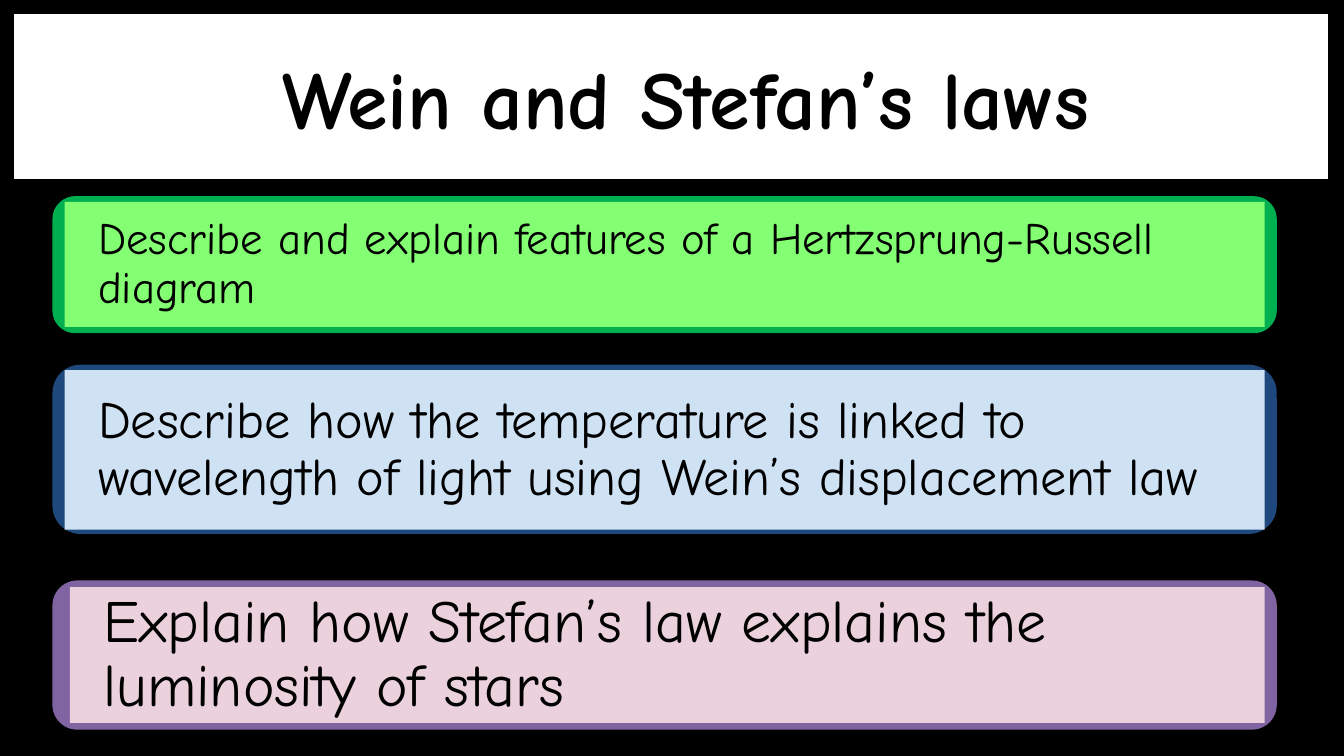
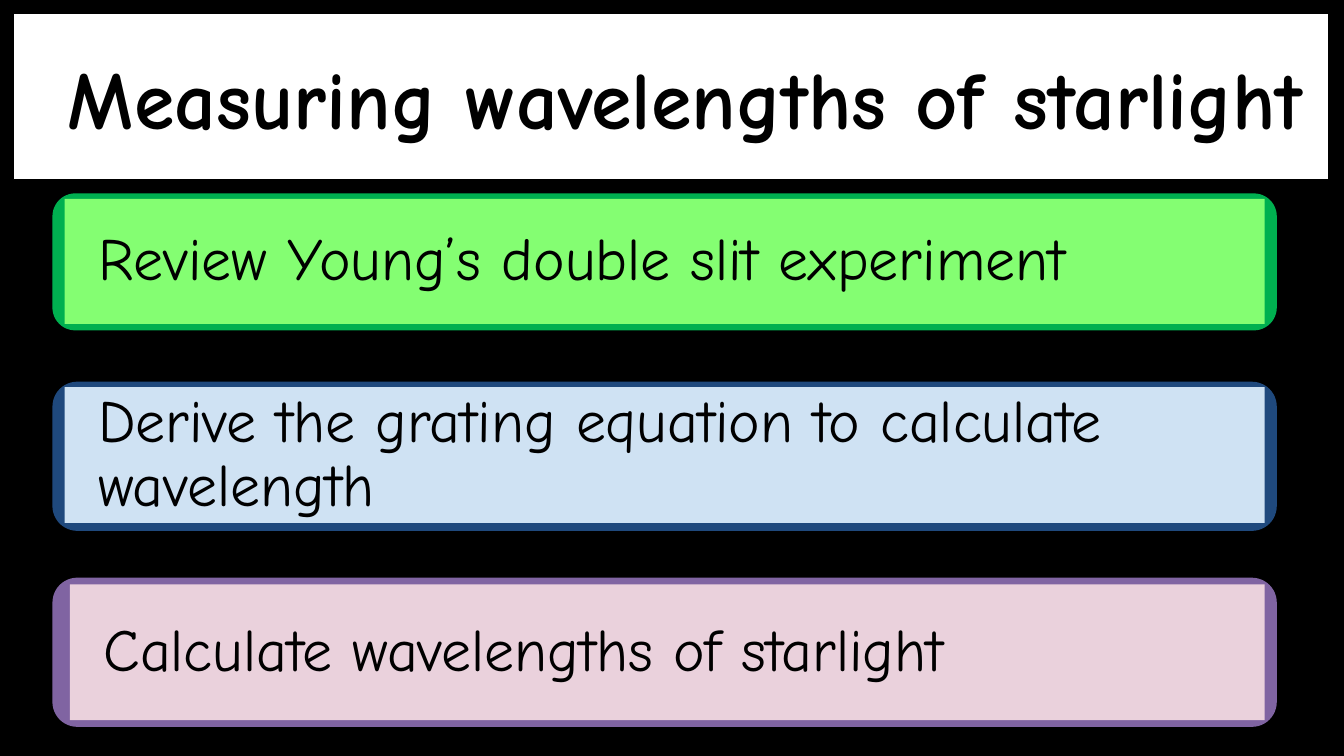
from dataclasses import dataclass

from pptx import Presentation
from pptx.dml.color import RGBColor
from pptx.enum import shapes, text
from pptx.util import Pt

FONT = "Comic Neue"
BLACK = RGBColor(0x00, 0x00, 0x00)
WHITE = RGBColor(0xFF, 0xFF, 0xFF)
DARK_GREEN = RGBColor(0x00, 0xB0, 0x50)
LIGHT_GREEN = RGBColor(0x84, 0xFE, 0x72)
DARK_BLUE = RGBColor(0x1F, 0x49, 0x7D)
LIGHT_BLUE = RGBColor(0xCF, 0xE2, 0xF3)
PURPLE = RGBColor(0x80, 0x64, 0xA2)
PINK = RGBColor(0xEA, 0xD1, 0xDC)

CARD_LEFT, CARD_WIDTH = 28.1, 655.9
PANEL_RIGHT = 677.5


@dataclass
class CardStyle:
    frame: RGBColor
    panel: RGBColor
    panel_left: float
    panel_inset: float


GREEN_CARD = CardStyle(DARK_GREEN, LIGHT_GREEN, 34.6, 3)
BLUE_CARD = CardStyle(DARK_BLUE, LIGHT_BLUE, 34.6, 2.9)
PINK_CARD = CardStyle(PURPLE, PINK, 37.4, 3.6)
CARD_STYLES = (GREEN_CARD, BLUE_CARD, PINK_CARD)

# Title, then (objective, font size, card top, card height, panel height)
LESSONS = [
    ("Wein and Stefan’s laws", [
        ("Describe and explain features of a Hertzsprung-Russell diagram",
         24, 105.1, 73.4, 67),
        ("Describe how the temperature is linked to wavelength of light "
         "using Wein’s displacement law", 28, 195.4, 90.7, 85.5),
        ("Explain how Stefan’s law explains the luminosity of stars",
         32, 311, 79.9, 72.7),
    ]),
    ("Measuring wavelengths of starlight", [
        ("Review Young’s double slit experiment", 32, 103.6, 73.4, 67),
        ("Derive the grating equation to calculate wavelength",
         32, 204.5, 79.9, 72.7),
        ("Calculate wavelengths of starlight", 32, 309.5, 79.9, 72.7),
    ]),
]


def add_box(parent, kind, left, top, width, height, fill):
    sp = parent.add_shape(kind, Pt(left), Pt(top), Pt(width), Pt(height))
    sp.shadow.inherit = False
    sp.fill.solid()
    sp.fill.fore_color.rgb = fill
    sp.line.fill.background()
    return sp


def write(sp, words, size, align, margin_x, margin_y, bold=False):
    """Fill a shape with one vertically centred paragraph and return it."""
    tf = sp.text_frame
    tf.word_wrap = True
    tf.vertical_anchor = text.MSO_ANCHOR.MIDDLE
    tf.margin_left = tf.margin_right = Pt(margin_x)
    tf.margin_top = tf.margin_bottom = Pt(margin_y)
    p = tf.paragraphs[0]
    p.text = words
    p.alignment = align
    p.font.name = FONT
    p.font.size = Pt(size)
    p.font.bold = bold
    p.font.color.rgb = BLACK
    return p


def add_title(s, title):
    sp = add_box(s.shapes, shapes.MSO_SHAPE.RECTANGLE,
                 7.2, 7.2, 704.9, 89, WHITE)
    sp.line.color.rgb = BLACK
    sp.line.width = Pt(0.75)
    write(sp, " " + title, 44, text.PP_ALIGN.CENTER, 7.2, 3.6, bold=True)


def add_card(s, style, objective, size, top, height, panel_height):
    """Draw a rounded frame with a paler text panel inside it, grouped."""
    group = s.shapes.add_group_shape().shapes
    add_box(group, shapes.MSO_SHAPE.ROUNDED_RECTANGLE,
            CARD_LEFT, top, CARD_WIDTH, height, style.frame)
    panel = add_box(group, shapes.MSO_SHAPE.RECTANGLE,
                    style.panel_left, top + style.panel_inset,
                    PANEL_RIGHT - style.panel_left, panel_height, style.panel)
    p = write(panel, objective, size, text.PP_ALIGN.LEFT, 18, 0)
    p.line_spacing = 0.9


def add_lesson(prs, title, objectives):
    s = prs.slides.add_slide(prs.slide_layouts[6])
    s.background.fill.solid()
    s.background.fill.fore_color.rgb = BLACK
    add_title(s, title)
    for style, objective in zip(CARD_STYLES, objectives):
        add_card(s, style, *objective)


def main():
    prs = Presentation()
    prs.slide_width, prs.slide_height = Pt(720), Pt(405)
    for title, objectives in LESSONS:
        add_lesson(prs, title, objectives)
    prs.save("out.pptx")


if __name__ == "__main__":
    main()
